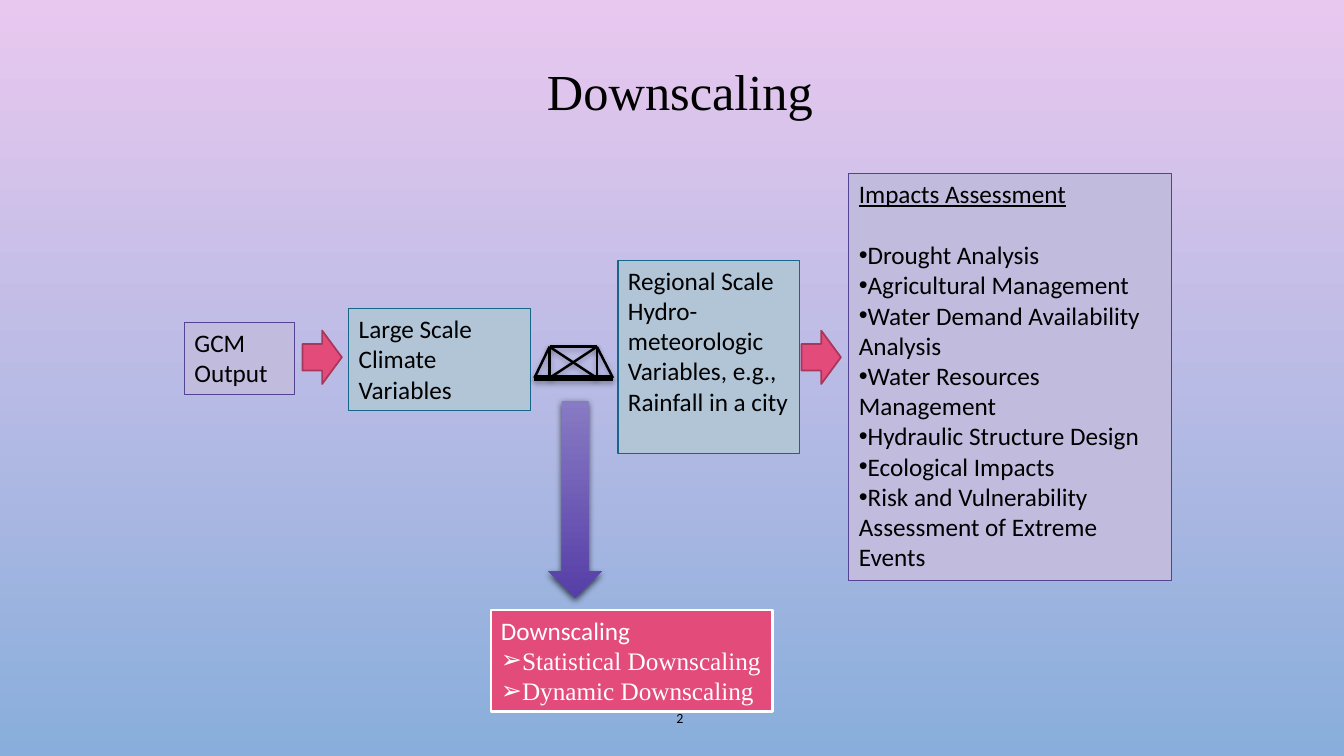
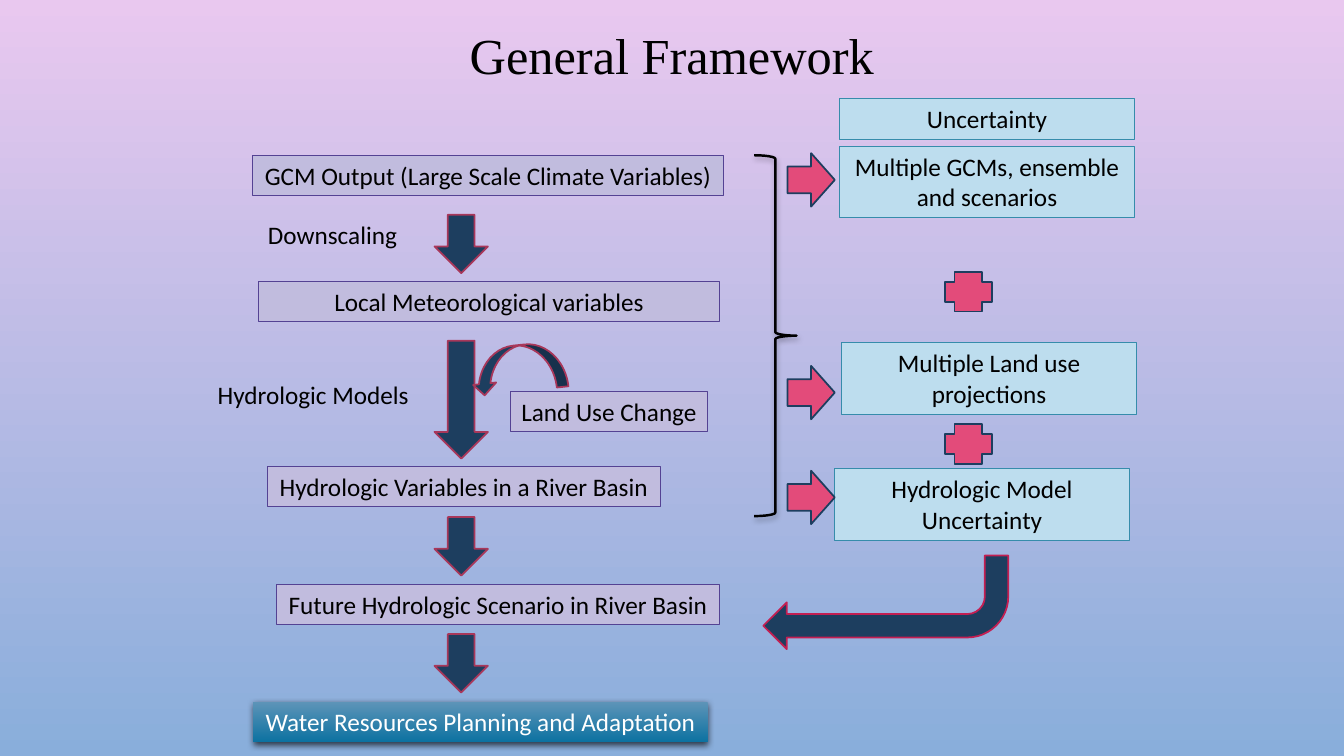
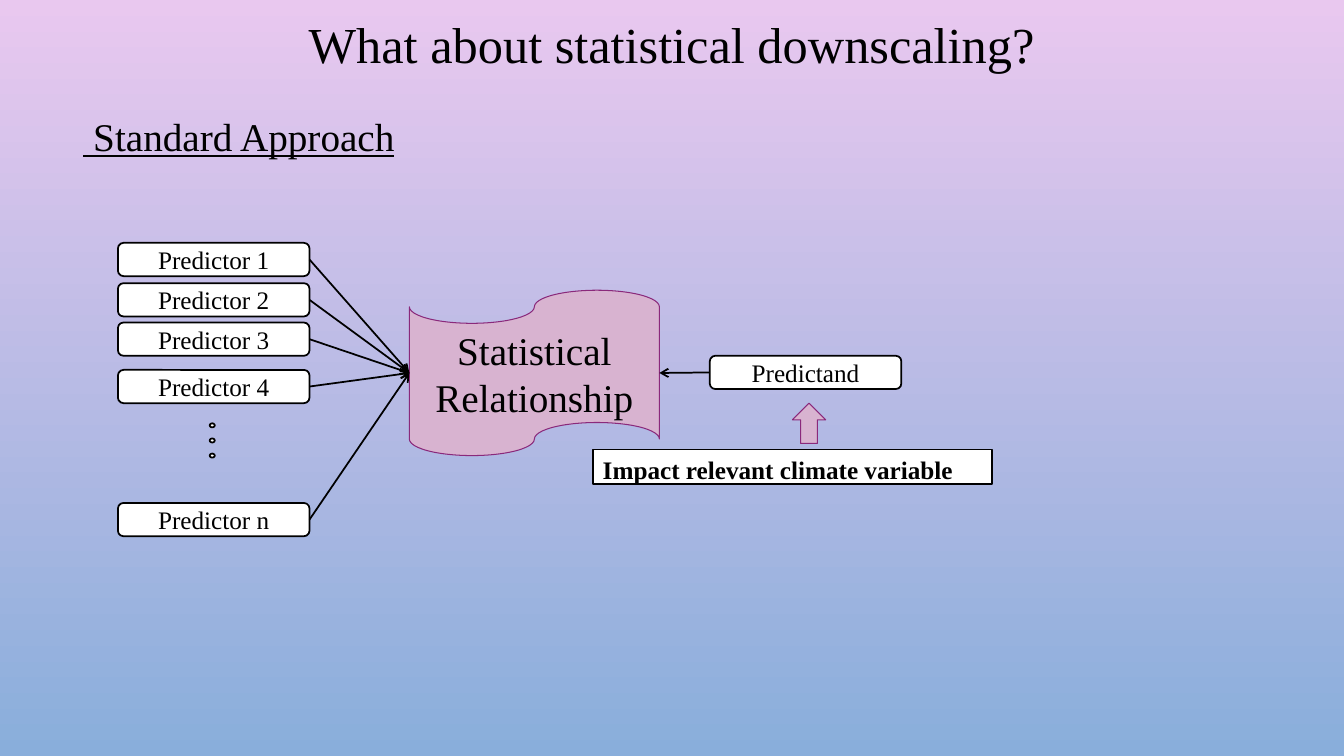
"""Build three slides on climate downscaling."""
import lxml.etree
import pptx
import pptx.dml.color
import pptx.enum.shapes
import pptx.enum.text
import pptx.oxml.ns
import pptx.util

Inches = pptx.util.Inches
Pt = pptx.util.Pt
RGBColor = pptx.dml.color.RGBColor
SHAPE = pptx.enum.shapes.MSO_SHAPE
STRAIGHT = pptx.enum.shapes.MSO_CONNECTOR.STRAIGHT
ANCHOR = pptx.enum.text.MSO_ANCHOR
ALIGN = pptx.enum.text.PP_ALIGN
qn = pptx.oxml.ns.qn

BLACK = RGBColor(0x00, 0x00, 0x00)
WHITE = RGBColor(0xFF, 0xFF, 0xFF)
SKY = (RGBColor(0xE9, 0xC8, 0xEF), RGBColor(0x89, 0xAE, 0xDB))
LILAC = RGBColor(0xC1, 0xBC, 0xDE)
PURPLE = RGBColor(0x54, 0x42, 0x93)
STEEL = RGBColor(0xB1, 0xC5, 0xD7)
TEAL = RGBColor(0x17, 0x65, 0x89)
PALE_BLUE = RGBColor(0xBD, 0xDD, 0xEE)
AQUA = RGBColor(0x36, 0x8C, 0xAB)
PINK = RGBColor(0xE3, 0x4B, 0x7A)
ROSE = RGBColor(0xA8, 0x37, 0x5A)
CRIMSON = RGBColor(0xC4, 0x1E, 0x52)
NAVY = RGBColor(0x1D, 0x3E, 0x5F)
MAUVE = RGBColor(0xD8, 0xB3, 0xD0)
PLUM = RGBColor(0x8A, 0x29, 0x7B)
VIOLET_FADE = (RGBColor(0x88, 0x7A, 0xC4), RGBColor(0x56, 0x3F, 0xA7))
BLUE_FADE = (RGBColor(0x5D, 0x94, 0xB8), RGBColor(0x0D, 0x72, 0xA1))

SANS = "Calibri"
SERIF = "Times New Roman"
SOFT_SHADOW = (28, 4, 2)
STRONG_SHADOW = (69, 5, 2)


class Builder:
    """Hold the deck style and the current slide."""

    def __init__(self):
        self.deck = pptx.Presentation()
        self.deck.slide_width = Inches(13.33)
        self.deck.slide_height = Inches(7.5)
        self.page = None

    def new_page(self, title, left, top, height):
        self.page = self.deck.slides.add_slide(self.deck.slide_layouts[6])
        self.paint(self.page.background.fill, SKY)
        box = self.text(title, (left, top, 11.33, height), size=36, font=SERIF,
                        align=ALIGN.CENTER)
        box.text_frame.vertical_anchor = ANCHOR.MIDDLE
        box.text_frame.paragraphs[0].line_spacing = 0.9

    def paint(self, fill, colour):
        if colour is None:
            fill.background()
        elif isinstance(colour, RGBColor):
            fill.solid()
            fill.fore_color.rgb = colour
        else:
            fill.gradient()
            fill.gradient_angle = 270
            for stop, stop_colour in zip(fill.gradient_stops, colour):
                stop.color.rgb = stop_colour

    def cast(self, effects, shadow):
        alpha, blur, distance = shadow
        outer = lxml.etree.SubElement(
            effects, qn("a:outerShdw"), blurRad=str(int(Pt(blur))),
            dist=str(int(Pt(distance))), dir="5400000", rotWithShape="0")
        colour = lxml.etree.SubElement(outer, qn("a:srgbClr"), val=str(BLACK))
        lxml.etree.SubElement(colour, qn("a:alpha"), val=str(alpha * 1000))

    def shape(self, kind, at, fill, line=None, width=1.25, rotation=0, shadow=None):
        shape = self.page.shapes.add_shape(kind, *map(Inches, at))
        shape.rotation = rotation
        self.paint(shape.fill, fill)
        self.paint(shape.line.fill, line)
        if line is not None:
            shape.line.width = Pt(width)
        shape.shadow.inherit = False
        if shadow:
            self.cast(shape._element.spPr.find(qn("a:effectLst")), shadow)
        return shape

    def para(self, shape, text, size=18, font=SANS, colour=BLACK, align=ALIGN.LEFT,
             bullet=None, bold=False, underline=False, before=0):
        frame = shape.text_frame
        frame.word_wrap = True
        para = frame.paragraphs[0]
        if para.runs:
            para = frame.add_paragraph()
        para.alignment = align
        if before:
            para.space_before = Pt(before)
        if bullet:
            properties = para._p.get_or_add_pPr()
            lxml.etree.SubElement(properties, qn("a:buFont"), typeface="Arial")
            lxml.etree.SubElement(properties, qn("a:buChar"), char=bullet)
        span = para.add_run()
        span.text = text
        span.font.size = Pt(size)
        span.font.name = font
        span.font.color.rgb = colour
        span.font.bold = bold
        span.font.underline = underline

    def text(self, text, at, **style):
        box = self.page.shapes.add_textbox(*map(Inches, at))
        self.para(box, text, **style)
        return box

    def box(self, text, at, fill, line=None, width=0.75, kind=SHAPE.RECTANGLE,
            anchor=ANCHOR.TOP, shadow=None, **style):
        box = self.shape(kind, at, fill, line, width, shadow=shadow)
        box.text_frame.vertical_anchor = anchor
        self.para(box, text, **style)
        return box

    def pill(self, text, left, top):
        return self.box(text, (left, top, 1.9, 0.33), WHITE, BLACK, 1.25,
                        SHAPE.ROUNDED_RECTANGLE, ANCHOR.MIDDLE,
                        font=SERIF, align=ALIGN.CENTER)

    def line(self, start, end, width, shadow=None):
        line = self.page.shapes.add_connector(STRAIGHT, *map(Inches, start + end))
        line.line.fill.solid()
        line.line.fill.fore_color.rgb = BLACK
        line.line.width = Pt(width)
        effects = lxml.etree.SubElement(line._element.spPr, qn("a:effectLst"))
        if shadow:
            self.cast(effects, shadow)
        return line

    def join(self, source, source_side, target, target_side):
        arrow = self.line((0, 0), (0, 0), 1.25)
        arrow.begin_connect(source, source_side)
        arrow.end_connect(target, target_side)
        outline = arrow._element.spPr.find(qn("a:ln"))
        lxml.etree.SubElement(outline, qn("a:tailEnd"), type="arrow")


def add_downscaling(build):
    build.new_page("Downscaling", 1.08, 0.06, 1.75)
    gcm = build.box("GCM", (1.83, 3.2, 1.09, 0.71), LILAC, PURPLE)
    build.para(gcm, "Output")
    impacts = build.box("Impacts Assessment", (8.42, 1.72, 3.2, 4.04), LILAC, PURPLE,
                        underline=True)
    topics = ["Drought Analysis", "Agricultural Management",
              "Water Demand Availability Analysis", "Water Resources Management",
              "Hydraulic Structure Design", "Ecological Impacts",
              "Risk and Vulnerability Assessment of Extreme Events"]
    for index, topic in enumerate(topics):
        build.para(impacts, topic, bullet="•", before=0 if index else 22)
    build.box("Large Scale Climate Variables", (3.46, 3.06, 1.8, 1.01), STEEL, TEAL)
    build.box("Regional Scale Hydro-meteorologic Variables, e.g., Rainfall in a city",
              (6.13, 2.58, 1.8, 1.92), STEEL, TEAL)
    for left in (3, 7.95):
        build.shape(SHAPE.RIGHT_ARROW, (left, 3.28, 0.39, 0.53), PINK, ROSE)

    outer_left, outer_right = (5.3, 3.75), (6.08, 3.75)
    top_left, top_right = (5.45, 3.44), (5.92, 3.44)
    base_left, base_right = (5.45, 3.75), (5.92, 3.75)
    build.line(outer_left, outer_right, 4.5, SOFT_SHADOW)
    for start, end in [(outer_left, top_left), (outer_right, top_right),
                       (top_left, top_right), (top_left, base_left),
                       (top_right, base_right), (top_right, base_left),
                       (top_left, base_right)]:
        build.line(start, end, 1.75, SOFT_SHADOW)

    build.shape(SHAPE.DOWN_ARROW, (5.44, 3.98, 0.53, 1.95), VIOLET_FADE,
                shadow=STRONG_SHADOW)
    methods = build.box("Downscaling", (4.87, 6.05, 2.79, 1.01), PINK, WHITE, 1.75,
                        colour=WHITE)
    for method in ("Statistical Downscaling", "Dynamic Downscaling"):
        build.para(methods, method, font=SERIF, colour=WHITE, bullet="➢")
    number = build.text("2", (5.58, 6.92, 2.33, 0.4), size=10, align=ALIGN.CENTER)
    number.text_frame.vertical_anchor = ANCHOR.MIDDLE


def add_framework(build):
    build.new_page("General Framework", 1, 0.07, 1.02)
    for text, left, top, width in [
            ("GCM Output (Large Scale Climate Variables)", 2.5, 1.54, 4.68),
            ("Local Meteorological variables", 2.56, 2.79, 4.58),
            ("Land Use Change", 5.06, 3.88, 1.96),
            ("Hydrologic Variables in a River Basin", 2.65, 4.63, 3.9),
            ("Future Hydrologic Scenario in River Basin", 2.74, 5.8, 4.4)]:
        build.box(text, (left, top, width, 0.4), LILAC, PURPLE, align=ALIGN.CENTER)
    build.box("Water Resources Planning and Adaptation", (2.51, 6.96, 4.51, 0.4),
              BLUE_FADE, shadow=STRONG_SHADOW, colour=WHITE, align=ALIGN.CENTER)
    build.text("Downscaling", (2.56, 2.13, 1.63, 0.4))
    build.text("Hydrologic Models", (2.06, 3.71, 2.28, 0.4))
    for top, height in [(2.13, 0.58), (3.38, 1.17), (5.13, 0.58), (6.29, 0.58)]:
        build.shape(SHAPE.DOWN_ARROW, (4.31, top, 0.53, height), NAVY, ROSE)
    build.shape(SHAPE.CURVED_RIGHT_ARROW, (4.91, 3.18, 0.46, 0.95), NAVY, ROSE,
                rotation=83.8)
    build.shape(SHAPE.RIGHT_BRACE, (7.48, 1.54, 0.42, 3.58), None, BLACK, 1.75,
                shadow=SOFT_SHADOW)
    build.shape(SHAPE.BENT_ARROW, (7.57, 5.51, 2.43, 0.93), NAVY, CRIMSON, rotation=180)
    for text, left, top, height in [
            ("Uncertainty", 8.33, 0.98, 0.4),
            ("Multiple GCMs, ensemble and scenarios", 8.33, 1.45, 0.71),
            ("Multiple Land use projections", 8.35, 3.4, 0.71),
            ("Hydrologic Model Uncertainty", 8.28, 4.65, 0.71)]:
        build.box(text, (left, top, 2.92, height), PALE_BLUE, AQUA, align=ALIGN.CENTER)
    for top in (1.52, 3.63, 4.67):
        build.shape(SHAPE.RIGHT_ARROW, (7.81, top, 0.47, 0.53), PINK, NAVY)
    for top in (2.7, 4.21):
        build.shape(SHAPE.CROSS, (9.37, top, 0.47, 0.39), PINK, NAVY)


def add_statistical(build):
    build.new_page("What about statistical downscaling?", 1, 0, 0.93)
    build.text(" Standard Approach", (0.73, 1.07, 11.33, 0.6), size=28, font=SERIF,
               underline=True)
    relationship = build.box("Statistical Relationship", (4.06, 2.88, 2.48, 1.64),
                             MAUVE, PLUM, kind=SHAPE.FLOWCHART_PUNCHED_TAPE,
                             anchor=ANCHOR.MIDDLE, size=28, font=SERIF,
                             align=ALIGN.CENTER)
    for name, top in [("1", 2.41), ("2", 2.81), ("3", 3.2), ("4", 3.67), ("n", 4.99)]:
        predictor = build.pill(f"Predictor {name}", 1.17, top)
        build.join(predictor, 3, relationship, 1)
    for index in range(3):
        build.shape(SHAPE.OVAL, (2.08, 4.2 + 0.15 * index, 0.05, 0.04), WHITE, BLACK)
    predictand = build.pill("Predictand", 7.04, 3.53)
    build.join(predictand, 1, relationship, 3)
    build.box("Impact relevant climate variable", (5.88, 4.46, 3.96, 0.34), WHITE, BLACK,
              1.25, font=SERIF, bold=True)
    build.shape(SHAPE.UP_ARROW, (7.86, 4, 0.33, 0.4), MAUVE, PLUM, 0.75)


def main():
    build = Builder()
    add_downscaling(build)
    add_framework(build)
    add_statistical(build)
    build.deck.save("out.pptx")


if __name__ == "__main__":
    main()
